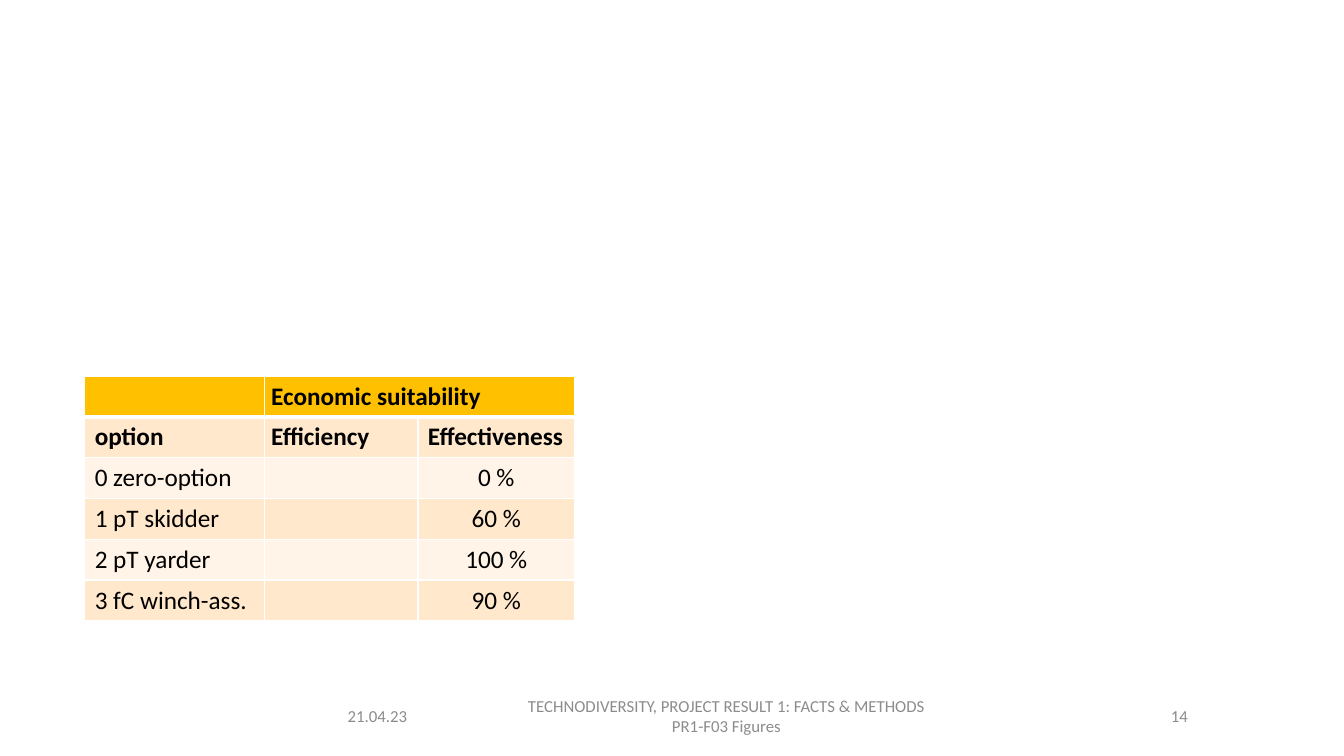
import pptx
import pptx.util
import pptx.dml.color
import pptx.enum.text
import pptx.oxml.ns
import lxml.etree

WIDE, HIGH = 13.33, 7.5
ROW = 0.405
TOP = 3.73
ALIGN = pptx.enum.text.PP_ALIGN
HEAD, DARK, PALE = "FFC000", "FFE8CC", "FFF4E7"
FILLS = [HEAD, DARK, PALE, DARK, PALE, DARK]

scores = {
    "left": 2.59,
    "cols": [1.555, 1.555],
    "rows": [
        ["Economic suitability", ""],
        ["Efficiency", "Effectiveness"],
        ["", "0 %"],
        ["", "60 %"],
        ["", "100 %"],
        ["", "90 %"],
    ],
    "align": ALIGN.CENTER,
}
options = {
    "left": 0.84,
    "cols": [1.78],
    "rows": [[""], ["option"], ["0 zero-option"], ["1 pT skidder"],
             ["2 pT yarder"], ["3 fC winch-ass."]],
    "align": ALIGN.LEFT,
}
footer = [
    (3.35, 1.34, ["21.04.23"], ALIGN.LEFT),
    (4.86, 4.69, ["TECHNODIVERSITY, PROJECT RESULT 1: FACTS & METHODS",
                  "PR1-F03 Figures"], ALIGN.CENTER),
    (9.77, 2.11, ["14"], ALIGN.RIGHT),
]

inch = pptx.util.Inches


def color(code):
    return pptx.dml.color.RGBColor.from_string(code)


def style(para, align, size, code, bold=False):
    para.alignment = align
    looks = {"name": "Calibri", "size": pptx.util.Pt(size), "bold": bold}
    for key, value in looks.items():
        setattr(para.font, key, value)
    para.font.color.rgb = color(code)


def border(cell, side, width):
    name = pptx.oxml.ns.qn
    props = cell._tc.get_or_add_tcPr()
    line = lxml.etree.SubElement(props, name("a:ln" + side),
                                 w=str(pptx.util.Pt(width)))
    fill = lxml.etree.SubElement(line, name("a:solidFill"))
    lxml.etree.SubElement(fill, name("a:srgbClr"), val="FFFFFF")


def add_grid(slide, data):
    rows, cols = data["rows"], data["cols"]
    frame = slide.shapes.add_table(
        len(rows), len(cols), inch(data["left"]), inch(TOP),
        inch(sum(cols)), inch(ROW * len(rows)))
    table = frame.table
    table.first_row = table.horz_banding = False
    for col, width in zip(table.columns, cols):
        col.width = inch(width)
    for r, words in enumerate(rows):
        table.rows[r].height = inch(ROW)
        for c, word in enumerate(words):
            cell = table.cell(r, c)
            for side in "LRTB":
                thick = (r, side) in [(0, "B"), (1, "T")]
                border(cell, side, 3 if thick else 1)
            cell.fill.solid()
            cell.fill.fore_color.rgb = color(FILLS[r])
            cell.text = word
            align = data["align"] if r > 1 else ALIGN.LEFT
            style(cell.text_frame.paragraphs[0], align, 18, "000000", r < 2)
    if len(cols) > 1:
        table.cell(0, 0).merge(table.cell(0, len(cols) - 1))


def add_note(slide, left, width, lines, align):
    box = slide.shapes.add_textbox(inch(left), inch(6.9), inch(width), inch(0.4))
    frame = box.text_frame
    frame.word_wrap = True
    frame.vertical_anchor = pptx.enum.text.MSO_ANCHOR.MIDDLE
    frame.text = "\n".join(lines)
    for para in frame.paragraphs:
        style(para, align, 12, "8C8C8C")


def main():
    deck = pptx.Presentation()
    deck.slide_width, deck.slide_height = inch(WIDE), inch(HIGH)
    slide = deck.slides.add_slide(deck.slide_layouts[6])
    for note in footer:
        add_note(slide, *note)
    for data in (scores, options):
        add_grid(slide, data)
    deck.save("out.pptx")


if __name__ == "__main__":
    main()
